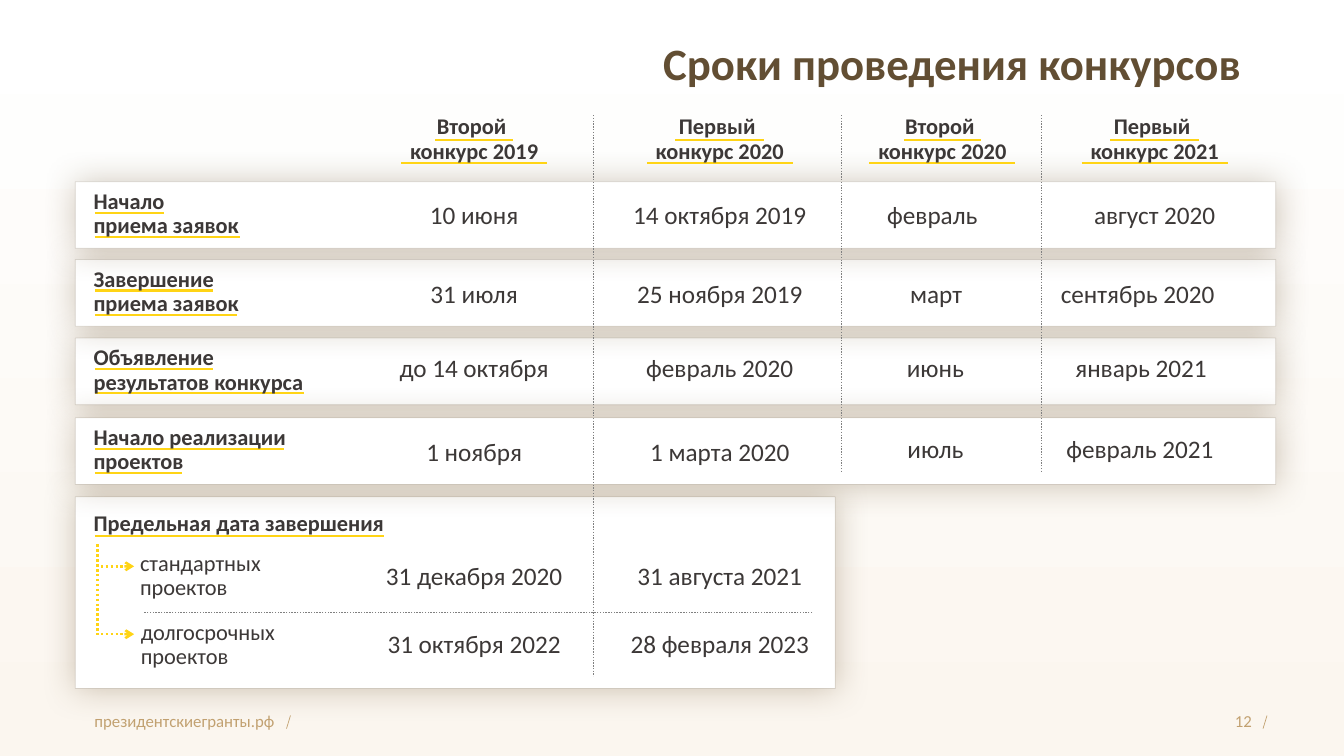
from lxml import etree
from pptx import Presentation
from pptx.dml.color import RGBColor
from pptx.enum.dml import MSO_LINE
from pptx.enum.shapes import MSO_CONNECTOR, MSO_SHAPE
from pptx.enum.text import MSO_ANCHOR, PP_ALIGN
from pptx.oxml.ns import qn
from pptx.util import Cm, Pt

LEFT, MID, RIGHT = PP_ALIGN.LEFT, PP_ALIGN.CENTER, PP_ALIGN.RIGHT
TOP, MIDDLE = MSO_ANCHOR.TOP, MSO_ANCHOR.MIDDLE
DOTS = MSO_LINE.ROUND_DOT
STRAIGHT = MSO_CONNECTOR.STRAIGHT
RECT = MSO_SHAPE.RECTANGLE

WHITE = RGBColor(0xFF, 0xFF, 0xFF)
CREAM = RGBColor(0xFB, 0xF6, 0xEF)
BROWN = RGBColor(0x62, 0x4E, 0x33)
EDGE = RGBColor(0x4C, 0x3B, 0x21)
SHADE = RGBColor(0x6B, 0x52, 0x2E)
SAND = RGBColor(0xC2, 0xA1, 0x71)
INK = RGBColor(0x3C, 0x38, 0x37)
GOLD = RGBColor(0xFF, 0xD4, 0x15)
GREY = RGBColor(0x80, 0x80, 0x80)

MIDS = (11.95, 18.14, 23.75, 29.1)
HEADS = [
    ("Второй \vконкурс 2019", 5.13, 1.96),
    ("Первый \vконкурс 2020", 4.85, 2.24),
    ("Второй \vконкурс 2020", 4.9, 1.96),
    ("Первый \vконкурс 2021", 5.31, 2.24),
]
ROWS = [
    (4.58, "Начало \vприема заявок", 4.93, (4.14, 6.05)),
    (6.54, "Завершение приема заявок", 5.05, (5.36, 5.97)),
    (8.52, "Объявление результатов конкурса", 6.3, (5.36, 7.67)),
    (10.53, "Начало реализации проектов", 5.59, (7.16, 4.6)),
]
DATES = [
    (4.9, [("10 июня", 3.23, MID), ("14 октября 2019", 5.74, MID),
           ("февраль", 3.28, LEFT), ("август 2020", 4.19, MID)]),
    (6.88, [("31 июля", 3.18, MID), ("25 ноября 2019", 5.49, MID),
            ("март", 2.13, LEFT), ("сентябрь 2020", 5.23, LEFT)]),
    (8.76, [("до 14 октября", 5.03, MID), ("февраль 2020", 4.95, MID),
            ("июнь", 2.29, LEFT), ("январь 2021", 4.5, LEFT)]),
    (10.87, [("1 ноября", 3.43, MID), ("1 марта 2020", 4.72, MID)]),
    (10.8, [None, None, ("июль", 2.26, LEFT), ("февраль 2021", 4.95, LEFT)]),
]
ENDS = [
    (14.07, [("31 декабря 2020", 7.54), ("31 августа 2021", 6.12)]),
    (15.8, [("31 октября 2022", 6.12), ("28 февраля 2023", 7.32)]),
]


class Board:
    def __init__(self, deck):
        self.slide = deck.slides.add_slide(deck.slide_layouts[5])
        self.shapes = self.slide.shapes
        self.face = "Calibri"

    def ground(self):
        fill = self.slide.background.fill
        fill.gradient()
        fill.gradient_angle = 270
        for stop, color in zip(fill.gradient_stops, (WHITE, CREAM)):
            stop.color.rgb = color

    def style(self, frame, text, size, color, bold, align, space, anchor):
        frame.word_wrap = True
        frame.vertical_anchor = anchor
        frame.text = text
        para = frame.paragraphs[0]
        para.alignment = align
        para.line_spacing = space
        font = para.font
        font.name, font.size, font.bold = self.face, Pt(size), bold
        font.color.rgb = color

    def title(self, text, x, y, w, h):
        box = self.shapes.title
        box.left, box.top, box.width, box.height = Cm(x), Cm(y), Cm(w), Cm(h)
        self.style(box.text_frame, text, 32, BROWN, True, RIGHT, 0.9, MIDDLE)

    def text(self, text, x, y, w, h, size=16, color=INK, bold=False,
             align=LEFT, space=0.9, anchor=TOP):
        box = self.shapes.add_textbox(Cm(x), Cm(y), Cm(w), Cm(h))
        self.style(box.text_frame, text, size, color, bold, align, space, anchor)

    def date(self, text, mid, y, w, align=MID, space=1.0):
        self.text(text, mid - w / 2, y, w, 1.02, 18, align=align, space=space)

    def line(self, x1, y1, x2, y2, color=GOLD, width=1.5, dash=None, arrow=False):
        rule = self.shapes.add_connector(STRAIGHT, Cm(x1), Cm(y1), Cm(x2), Cm(y2))
        rule.line.color.rgb = color
        rule.line.width = Pt(width)
        if dash:
            rule.line.dash_style = dash
        if arrow:
            etree.SubElement(rule.line._get_or_add_ln(), qn("a:tailEnd"), type="arrow")
        etree.SubElement(rule._element.spPr, qn("a:effectLst"))

    def card(self, x, y, w, h):
        card = self.shapes.add_shape(RECT, Cm(x), Cm(y), Cm(w), Cm(h))
        card.fill.solid()
        card.fill.fore_color.rgb = WHITE
        card.line.color.rgb = EDGE
        card.line.width = Pt(0.5)
        edge = card.line._get_or_add_ln().find(".//" + qn("a:srgbClr"))
        etree.SubElement(edge, qn("a:alpha"), val="17000")
        card.shadow.inherit = False
        glow = card._element.spPr.find(qn("a:effectLst"))
        outer = etree.SubElement(glow, qn("a:outerShdw"), blurRad=str(Pt(24)),
                                 dist="0", dir="0", algn="ctr", rotWithShape="0")
        tint = etree.SubElement(outer, qn("a:srgbClr"), val=str(SHADE))
        etree.SubElement(tint, qn("a:alpha"), val="33000")


def main():
    deck = Presentation()
    deck.slide_width, deck.slide_height = Cm(33.87), Cm(19.05)
    board = Board(deck)
    board.ground()
    board.title("Сроки проведения конкурсов", 6.83, 0.53, 24.71, 2.26)

    board.text("президентскиегранты.рф", 2.13, 17.65, 7.7, 1.02, 12, SAND,
               space=1.0, anchor=MIDDLE)
    board.text("12", 29.67, 17.65, 2.13, 1.02, 12, SAND, align=RIGHT,
               space=1.0, anchor=MIDDLE)
    for x in (7.32, 31.93):
        board.line(x, 18.03, x - 0.1, 18.36, SAND, 0.5)

    board.card(1.9, 12.52, 19.15, 4.83)
    for row in (2, 3, 1, 0):
        board.card(1.9, ROWS[row][0], 30.25, 1.68)

    for top, label, width, ends in ROWS:
        for end, drop in zip(ends, (0.78, 1.39)):
            board.line(2.39, top + drop, end, top + drop)
        board.text(label, 2.11, top + 0.09, width, 1.5, bold=True)

    board.line(2.39, 13.51, 9.68, 13.51)
    board.text("Предельная дата завершения", 2.11, 12.78, 11.4, 0.86, bold=True)
    board.text("стандартных проектов", 3.28, 13.79, 4.85, 1.5)
    board.text("долгосрочных проектов", 3.3, 15.52, 6, 1.5)
    for y in (14.27, 15.98):
        board.line(2.54, y, 3.38, y, width=1.75, dash=DOTS, arrow=True)
    board.line(2.46, 13.72, 2.46, 16, width=1.75, dash=DOTS)
    board.line(20.47, 15.44, 3.63, 15.44, GREY, 1, DOTS)

    for mid, (head, width, short) in zip(MIDS, HEADS):
        for span, y in ((short, 3.53), (3.68, 4.11)):
            board.line(mid - span / 2, y, mid + span / 2, y)
        board.text(head, mid - width / 2, 2.79, width, 1.7, bold=True, align=MID)

    for y, cells in DATES:
        for mid, cell in zip(MIDS, cells):
            if cell:
                text, width, align = cell
                board.date(text, mid, y, width, align)
    for y, cells in ENDS:
        for mid, (text, width) in zip(MIDS, cells):
            board.date(text, mid, y, width, space=0.9)

    for x, end in ((14.96, 17.04), (21.21, 11.89), (26.24, 11.89)):
        board.line(x, 2.9, x, end, GREY, 1, DOTS)

    deck.save("out.pptx")


if __name__ == "__main__":
    main()
